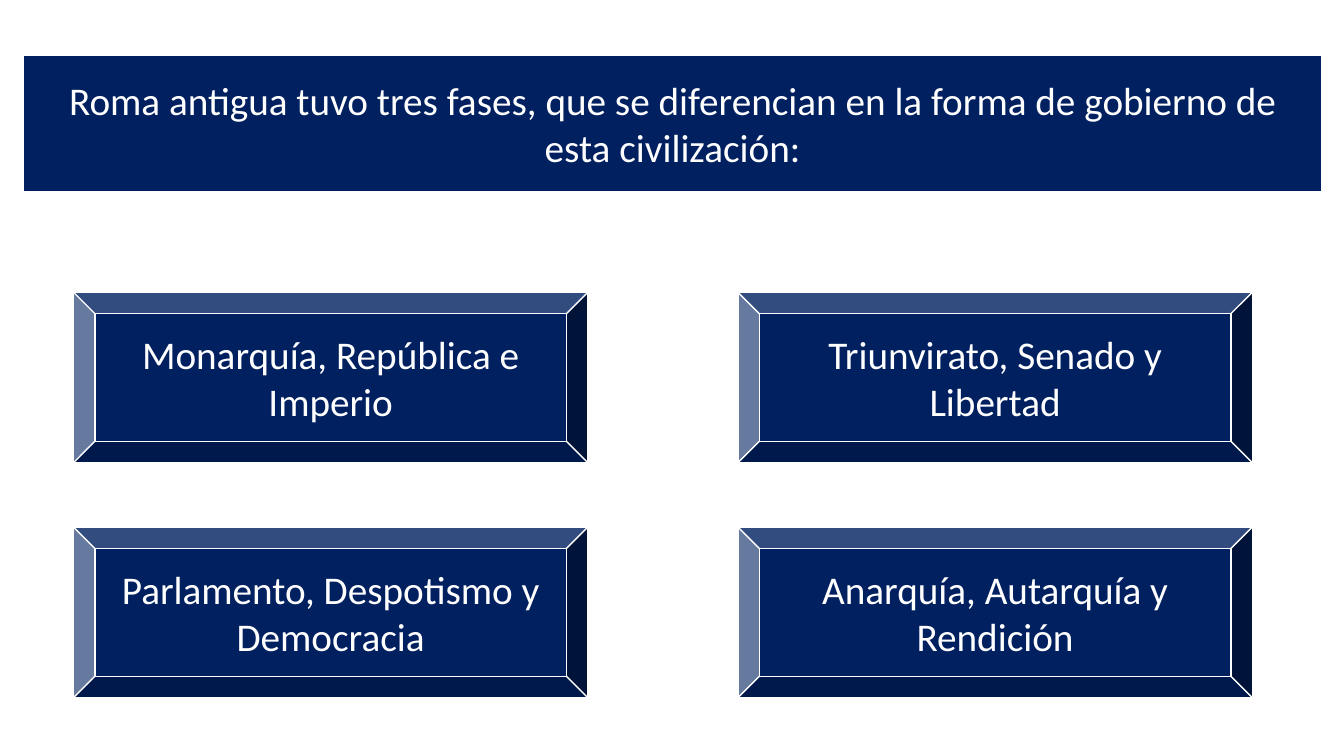
import pptx
import pptx.util
import pptx.dml.color
import pptx.enum.shapes
import pptx.enum.text

SHAPE = pptx.enum.shapes.MSO_SHAPE
INCH = pptx.util.Inches


def color(text):
    return pptx.dml.color.RGBColor.from_string(text)


class Quiz:
    font = "Calibri"
    size = 28
    navy = "002060"
    white = "FFFFFF"
    left, top = 0.73, 2.9
    step_x, step_y = 6.59, 2.33
    width, height = 5.1, 1.69

    def __init__(self, slide):
        self.slide = slide

    def box(self, kind, text, x, y, w, h):
        shape = self.slide.shapes.add_shape(
            kind, INCH(x), INCH(y), INCH(w), INCH(h))
        shape.shadow.inherit = False
        shape.fill.solid()
        shape.fill.fore_color.rgb = color(self.navy)
        shape.line.color.rgb = color(self.white)
        shape.line.width = pptx.util.Pt(1)
        frame = shape.text_frame
        frame.word_wrap = True
        frame.vertical_anchor = pptx.enum.text.MSO_ANCHOR.MIDDLE
        frame.text = text
        for par in frame.paragraphs:
            par.alignment = pptx.enum.text.PP_ALIGN.CENTER
            for run in par.runs:
                run.font.name = self.font
                run.font.size = pptx.util.Pt(self.size)
                run.font.color.rgb = color(self.white)

    def title(self, text):
        self.box(SHAPE.RECTANGLE, text, 0.23, 0.55, 12.88, 1.35)

    def answer(self, text, col, row):
        self.box(SHAPE.BEVEL, text,
                 self.left + col * self.step_x, self.top + row * self.step_y,
                 self.width, self.height)


def main():
    deck = pptx.Presentation()
    deck.slide_width = INCH(13.33)
    deck.slide_height = INCH(7.5)
    quiz = Quiz(deck.slides.add_slide(deck.slide_layouts[6]))
    quiz.title("Roma antigua tuvo tres fases, que se diferencian "
               "en la forma de gobierno de esta civilización:")
    answers = [
        "Monarquía, República e Imperio",
        "Triunvirato, Senado y Libertad",
        "Parlamento, Despotismo y Democracia",
        "Anarquía, Autarquía y Rendición",
    ]
    for index, text in enumerate(answers):
        row, col = divmod(index, 2)
        quiz.answer(text, col, row)
    deck.save("out.pptx")


if __name__ == "__main__":
    main()
